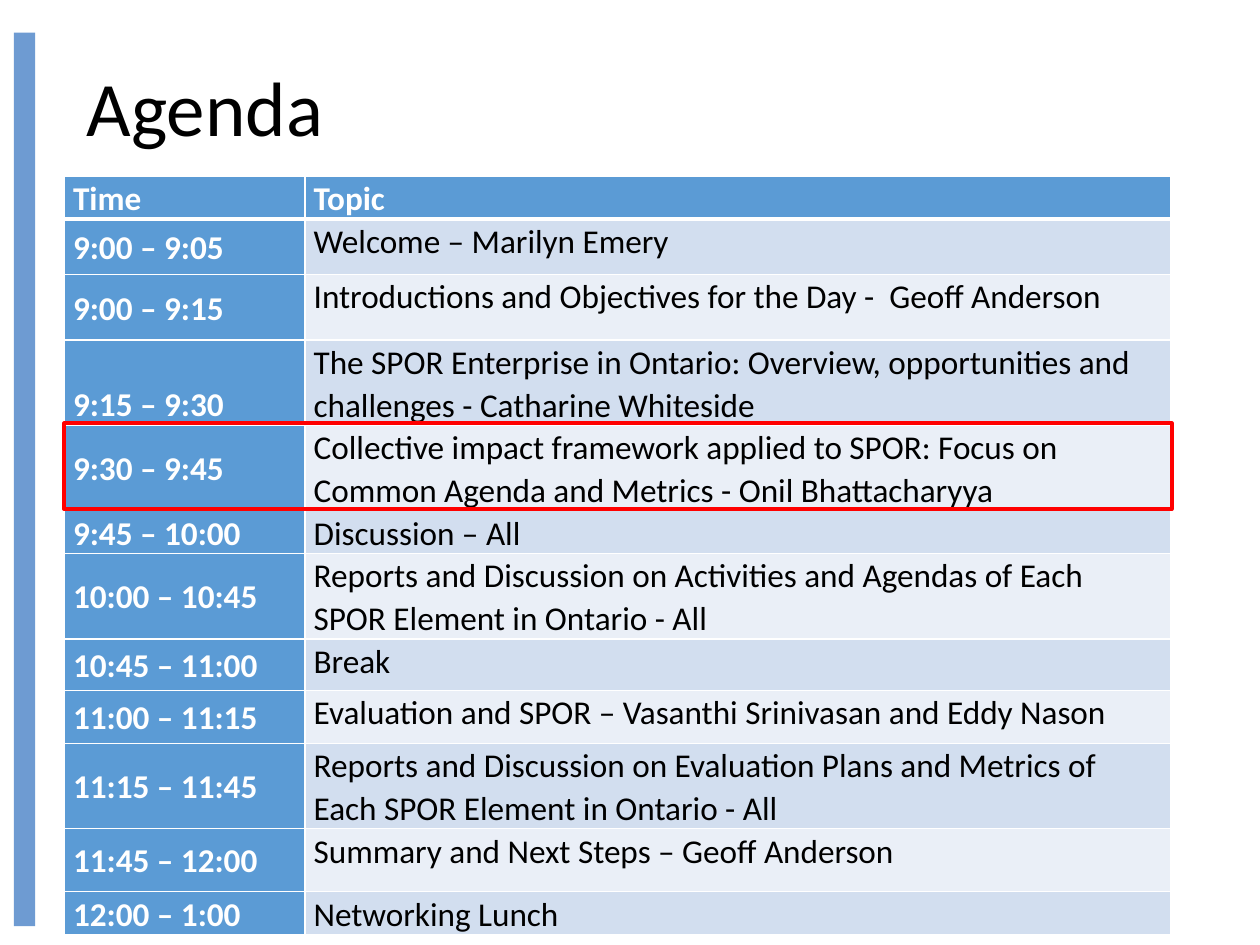
from dataclasses import dataclass

from lxml.etree import SubElement
from pptx import Presentation
from pptx.dml.color import RGBColor
from pptx.enum.shapes import MSO_SHAPE
from pptx.enum.text import MSO_ANCHOR
from pptx.oxml.ns import qn
from pptx.util import Inches, Pt


@dataclass(frozen=True)
class Theme:
    font: str = "Calibri"
    title_size: float = 44
    table_size: float = 19
    text: str = "000000"
    light: str = "FFFFFF"
    bar: str = "6E9BD2"
    header: str = "5B9BD5"
    bands: tuple = ("D2DEEF", "EAEFF7")
    highlight: str = "FF0000"


class SlideBuilder:
    """Places elements on a grid of 100 columns by 75 rows."""

    COLS, ROWS = 100, 75

    def __init__(self, prs, theme):
        self.theme = theme
        self.slide = prs.slides.add_slide(prs.slide_layouts[6])
        self.col = prs.slide_width / self.COLS
        self.row = prs.slide_height / self.ROWS

    def box(self, x, y, w, h):
        return (round(x * self.col), round(y * self.row),
                round(w * self.col), round(h * self.row))

    def style(self, p, size, color, bold=False, spacing=1.0):
        p.line_spacing = spacing
        for r in p.runs:
            r.font.name = self.theme.font
            r.font.size = Pt(size)
            r.font.bold = bold
            r.font.color.rgb = RGBColor.from_string(color)

    def rect(self, x, y, w, h, fill=None, line=None, width=2.25):
        sp = self.slide.shapes.add_shape(MSO_SHAPE.RECTANGLE, *self.box(x, y, w, h))
        sp.shadow.inherit = False
        if fill:
            sp.fill.solid()
            sp.fill.fore_color.rgb = RGBColor.from_string(fill)
        else:
            sp.fill.background()
        if line:
            sp.line.color.rgb = RGBColor.from_string(line)
            sp.line.width = Pt(width)
        else:
            sp.line.fill.background()

    def title(self, text, x, y, w, h):
        tf = self.slide.shapes.add_textbox(*self.box(x, y, w, h)).text_frame
        tf.word_wrap = True
        tf.vertical_anchor = MSO_ANCHOR.MIDDLE
        tf.text = text
        self.style(tf.paragraphs[0], self.theme.title_size, self.theme.text, spacing=0.9)

    def borders(self, cell, top, bottom):
        tc_pr = cell._tc.get_or_add_tcPr()
        for side, width in (("L", 1), ("R", 1), ("T", top), ("B", bottom)):
            ln = SubElement(tc_pr, qn(f"a:ln{side}"), w=str(Pt(width)))
            fill = SubElement(ln, qn("a:solidFill"))
            SubElement(fill, qn("a:srgbClr"), val=self.theme.light)

    def cell(self, cell, text, fill, color, bold, anchor, top, bottom):
        self.borders(cell, top, bottom)
        cell.fill.solid()
        cell.fill.fore_color.rgb = RGBColor.from_string(fill)
        cell.margin_left = cell.margin_right = Inches(0.07)
        cell.margin_top = cell.margin_bottom = 0
        cell.vertical_anchor = anchor
        cell.text = text
        self.style(cell.text_frame.paragraphs[0], self.theme.table_size,
                   color, bold, spacing=1.07)

    def agenda(self, x, y, widths, header, items):
        th = self.theme
        rows = [(*header, 3.3, MSO_ANCHOR.TOP), *items]
        frame = self.slide.shapes.add_table(
            len(rows), len(widths),
            *self.box(x, y, sum(widths), sum(row[2] for row in rows)))
        table = frame.table
        for column, width in zip(table.columns, widths):
            column.width = round(width * self.col)
        for i, (time, topic, height, anchor) in enumerate(rows):
            table.rows[i].height = round(height * self.row)
            is_header = i == 0
            edges = (3 if i == 1 else 1, 3 if is_header else 1)
            fill = th.header if is_header else th.bands[(i - 1) % 2]
            color = th.light if is_header else th.text
            self.cell(table.cell(i, 0), time, th.header, th.light, True, anchor, *edges)
            self.cell(table.cell(i, 1), topic, fill, color, is_header,
                      MSO_ANCHOR.TOP, *edges)


TOP, MIDDLE, BOTTOM = MSO_ANCHOR.TOP, MSO_ANCHOR.MIDDLE, MSO_ANCHOR.BOTTOM

# Time, topic, row height in grid rows, anchor of the time
ITEMS = [
    ("9:00 – 9:05", "Welcome – Marilyn Emery", 4.4, MIDDLE),
    ("9:00 – 9:15", "Introductions and Objectives for the Day -  Geoff Anderson",
     5.2, MIDDLE),
    ("9:15 – 9:30", "The SPOR Enterprise in Ontario: Overview, opportunities and "
     "challenges - Catharine Whiteside", 6.6, BOTTOM),
    ("9:30 – 9:45", "Collective impact framework applied to SPOR: Focus on "
     "Common Agenda and Metrics - Onil Bhattacharyya", 6.6, MIDDLE),
    ("9:45 – 10:00", "Discussion – All", 3.3, TOP),
    ("10:00 – 10:45", "Reports and Discussion on Activities and Agendas of Each "
     "SPOR Element in Ontario - All", 6.6, MIDDLE),
    ("10:45 – 11:00", "Break", 4.1, MIDDLE),
    ("11:00 – 11:15", "Evaluation and SPOR – Vasanthi Srinivasan and Eddy Nason",
     4.2, MIDDLE),
    ("11:15 – 11:45", "Reports and Discussion on Evaluation Plans and Metrics of "
     "Each SPOR Element in Ontario - All", 6.6, MIDDLE),
    ("11:45 – 12:00", "Summary and Next Steps – Geoff Anderson", 5, MIDDLE),
    ("12:00 – 1:00", "Networking Lunch", 3.3, MIDDLE),
]


def main():
    prs = Presentation()
    prs.slide_width, prs.slide_height = Inches(10), Inches(7.5)
    theme = Theme()
    s = SlideBuilder(prs, theme)

    # Side bar and title
    s.rect(1.1, 2.6, 1.7, 70.9, fill=theme.bar)
    s.title("Agenda", 5.9, 1.6, 86.2, 14.5)

    # Agenda table
    s.agenda(5.1, 14, (19.1, 68.7), ("Time", "Topic"), ITEMS)

    # Frame around the current item
    s.rect(5.1, 33.6, 87.9, 6.8, line=theme.highlight)

    prs.save("out.pptx")


if __name__ == "__main__":
    main()
